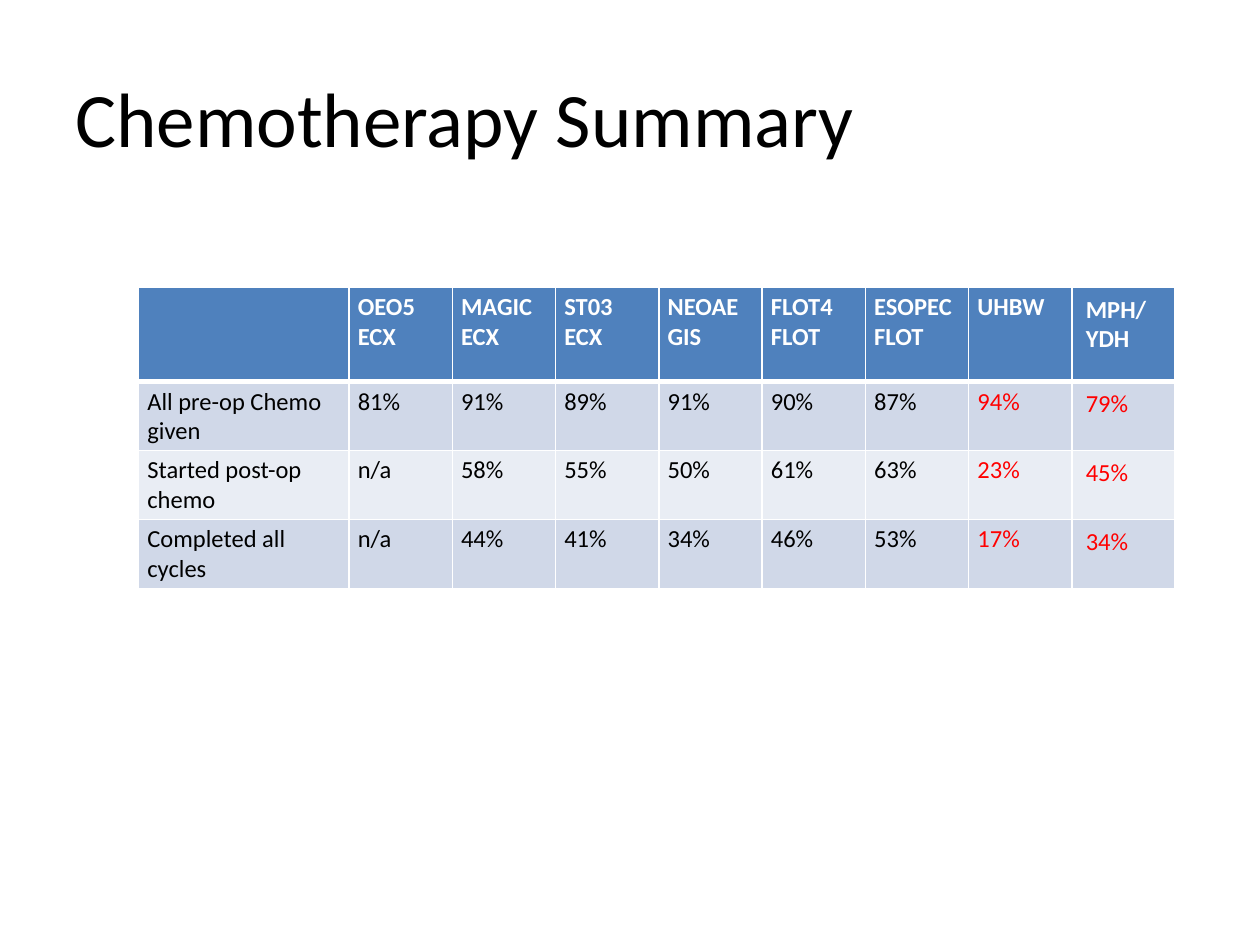
from lxml.etree import SubElement
from pptx import Presentation
from pptx.dml.color import RGBColor
from pptx.enum.text import MSO_ANCHOR as Anchor
from pptx.oxml.ns import qn
from pptx.util import Inches, Pt

WHITE, BLACK, RED = "FFFFFF", "000000", "FF0000"
HEADER_FILL, BAND_FILLS = "4F81BD", ("D0D8E8", "E9EDF4")

TITLE_BOX = (0.5, 0.3, 9, 1.25)
TABLE_BOX = (1.1, 2.28, 8.23, 2.37)
LABEL_WIDTH, HEADER_HEIGHT = 1.67, 0.75
LOCAL_COLUMNS = 2  # the last columns hold the local centres' results

RESULTS = [
    ["", "OEO5\nECX", "MAGIC\nECX", "ST03\nECX", "NEOAEGIS",
     "FLOT4\nFLOT", "ESOPEC\nFLOT", "UHBW", "MPH/\nYDH"],
    ["All pre-op Chemo given", "81%", "91%", "89%", "91%", "90%", "87%", "94%", "79%"],
    ["Started post-op chemo", "n/a", "58%", "55%", "50%", "61%", "63%", "23%", "45%"],
    ["Completed all cycles", "n/a", "44%", "41%", "34%", "46%", "53%", "17%", "34%"],
]


def color(value):
    return RGBColor.from_string(value)


def write(frame, text, size, ink, bold=False):
    """Put each line of text in its own paragraph."""
    frame.text = text
    for para in frame.paragraphs:
        for name, value in {"name": "Calibri", "size": Pt(size), "bold": bold}.items():
            setattr(para.font, name, value)
        for span in para.runs:
            for name, value in {"name": "Calibri", "size": Pt(size), "bold": bold}.items():
                setattr(span.font, name, value)
            span.font.color.rgb = color(ink)


def set_borders(cell, widths):
    """Draw white cell borders; widths maps each side to points."""
    properties = cell._tc.get_or_add_tcPr()
    for side, width in widths.items():
        line = SubElement(properties, qn(f"a:ln{side}"), w=str(Pt(width)))
        fill = SubElement(line, qn("a:solidFill"))
        SubElement(fill, qn("a:srgbClr"), val=WHITE)


def add_title(page, box, text):
    frame = page.shapes.add_textbox(*map(Inches, box)).text_frame
    frame.word_wrap = True
    frame.vertical_anchor = Anchor.MIDDLE
    write(frame, text, 44, BLACK)


def add_results(page, box, rows):
    row_count, column_count = len(rows), len(rows[0])
    table = page.shapes.add_table(row_count, column_count, *map(Inches, box)).table
    table.first_row = table.horz_banding = False

    # Grid: a wide label column and a tall header, the rest shared equally
    width, height = box[2:]
    for index, column in enumerate(table.columns):
        share = (width - LABEL_WIDTH) / (column_count - 1)
        column.width = Inches(share if index else LABEL_WIDTH)
    for index, row in enumerate(table.rows):
        share = (height - HEADER_HEIGHT) / (row_count - 1)
        row.height = Inches(share if index else HEADER_HEIGHT)

    # Cells
    for r, values in enumerate(rows):
        header = r == 0
        for c, value in enumerate(values):
            cell = table.cell(r, c)
            local = c >= column_count - LOCAL_COLUMNS
            side, edge = (0.11, 0.06) if c == column_count - 1 else (0.07, 0.04)
            margins = {"margin_left": side, "margin_right": side,
                       "margin_top": edge, "margin_bottom": edge}
            for name, margin in margins.items():
                setattr(cell, name, Inches(margin))
            set_borders(cell, {"L": 1, "R": 1, "T": 3 if r == 1 else 1,
                               "B": 3 if header else 1})
            cell.fill.solid()
            cell.fill.fore_color.rgb = color(HEADER_FILL if header else BAND_FILLS[(r - 1) % 2])
            ink = WHITE if header else RED if local else BLACK
            write(cell.text_frame, value, 14, ink, bold=header)


def main():
    deck = Presentation()
    deck.slide_width, deck.slide_height = Inches(10), Inches(7.5)
    page = deck.slides.add_slide(deck.slide_layouts[6])
    add_title(page, TITLE_BOX, "Chemotherapy Summary")
    add_results(page, TABLE_BOX, RESULTS)
    deck.save("out.pptx")


if __name__ == "__main__":
    main()
